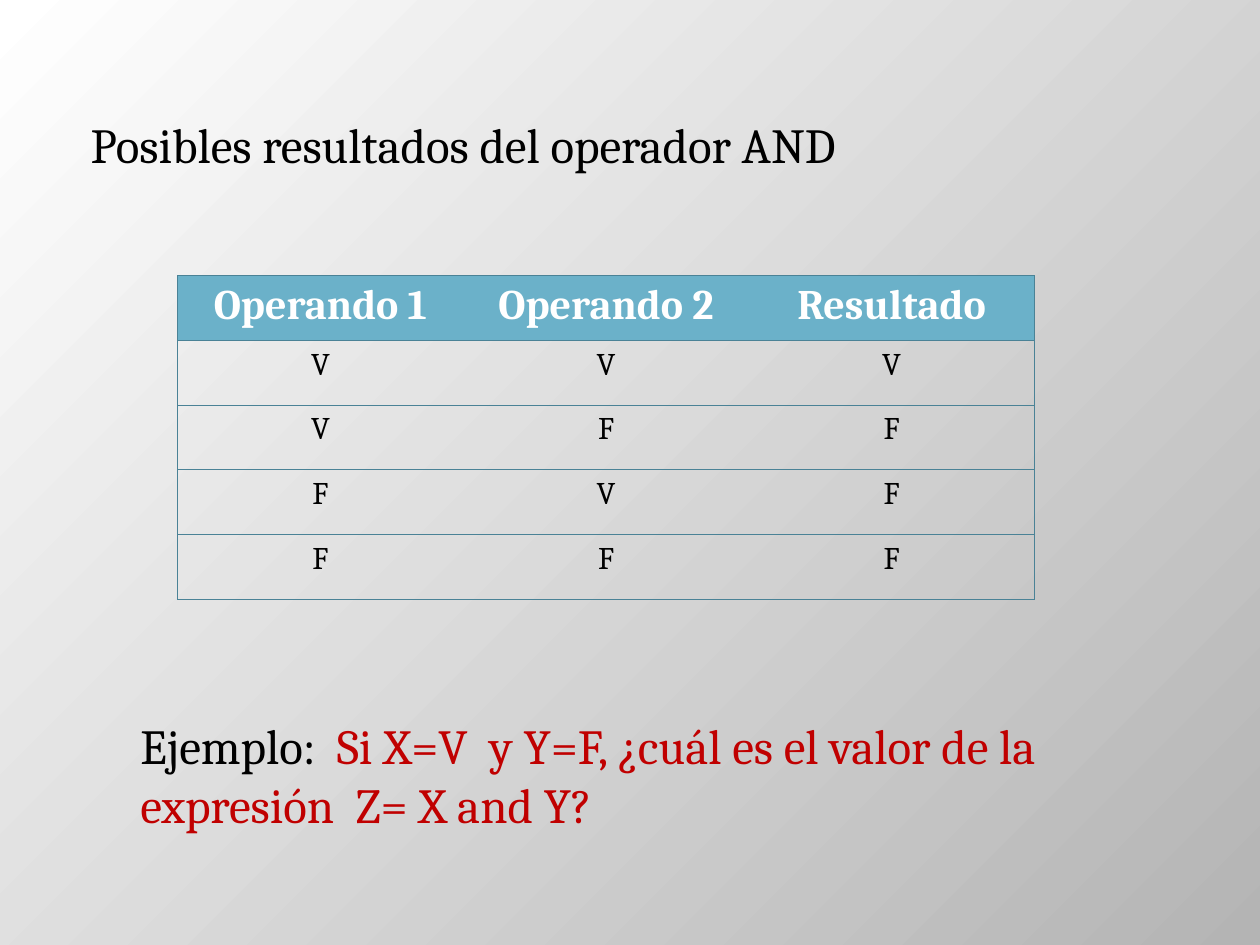
import pptx
import pptx.dml.color
import pptx.enum.text
import pptx.oxml
import pptx.oxml.ns
import pptx.util

Pt = pptx.util.Pt
NS = pptx.oxml.ns.nsdecls("a")


def color(code):
    return pptx.dml.color.RGBColor.from_string(code)


class Deck:
    font = "Cambria"
    ink = "000000"
    light = "FFFFFF"
    shade = "B4B4B4"
    head = "6BB1C9"
    edge = "4A8296"
    accent = "C00000"

    def __init__(self, wide, high):
        self.file = pptx.Presentation()
        self.file.slide_width, self.file.slide_height = Pt(wide), Pt(high)
        self.slide = self.file.slides.add_slide(self.file.slide_layouts[6])

    def backdrop(self):
        """Fill the background with a gradient spreading from the top left."""
        fill = self.slide.background.fill
        fill.gradient()
        for stop, code, place in zip(fill.gradient_stops, (self.light, self.shade), (0, 1)):
            stop.color.rgb = color(code)
            stop.position = place
        grad = self.slide.background._cSld.find(".//" + pptx.oxml.ns.qn("a:gradFill"))
        grad.remove(grad.find(pptx.oxml.ns.qn("a:lin")))
        grad.append(pptx.oxml.parse_xml(
            f'<a:path {NS} path="circle"><a:fillToRect r="100000" b="100000"/></a:path>'))

    def style(self, para, size, code=None, bold=False):
        para.font.name, para.font.size, para.font.bold = self.font, Pt(size), bold
        if code:
            para.font.color.rgb = color(code)

    def text(self, box, parts, size):
        """Add one paragraph made of (words, colour) parts."""
        frame = self.slide.shapes.add_textbox(*map(Pt, box)).text_frame
        frame.word_wrap = True
        para = frame.paragraphs[0]
        self.style(para, size)
        for words, code in parts:
            run = para.add_run()
            run.text = words
            run.font.name, run.font.size = self.font, Pt(size)
            run.font.color.rgb = color(code)
        return para

    def border(self, cell, side, shown):
        paint = f'<a:solidFill><a:srgbClr val="{self.edge}"/></a:solidFill>' if shown else "<a:noFill/>"
        cell._tc.get_or_add_tcPr().append(pptx.oxml.parse_xml(
            f'<a:ln{side} {NS} w="{Pt(0.75)}">{paint}</a:ln{side}>'))

    def table(self, box, rows):
        """Add a table with a filled head, row lines and an outer frame."""
        last = len(rows[0]) - 1
        grid = self.slide.shapes.add_table(len(rows), last + 1, *map(Pt, box)).table
        grid.horz_banding = False
        for r, row in enumerate(rows):
            for c, word in enumerate(row):
                cell = grid.cell(r, c)
                for side, shown in (("L", c == 0), ("R", c == last), ("T", True), ("B", True)):
                    self.border(cell, side, shown)
                if r == 0:
                    cell.fill.solid()
                    cell.fill.fore_color.rgb = color(self.head)
                else:
                    cell.fill.background()
                cell.text = word
                para = cell.text_frame.paragraphs[0]
                para.alignment = pptx.enum.text.PP_ALIGN.CENTER
                if r == 0:
                    self.style(para, 24, self.light, True)
                else:
                    self.style(para, 18, self.ink)


def main():
    deck = Deck(720, 540)
    deck.backdrop()

    # Heading
    title = deck.text((34, 62, 648, 62), [("Posibles resultados del operador AND", deck.ink)], 28)
    title.space_before = Pt(5.6)
    props = title._p.get_or_add_pPr()
    props.set("marL", str(Pt(43.2)))
    props.set("indent", str(Pt(-32.4)))

    # Truth table
    deck.table((101.5, 157.5, 489.6, 185),
               [("Operando 1", "Operando 2", "Resultado"), "VVV", "VFF", "FVF", "FFF"])

    # Example
    deck.text((73.2, 405.5, 590.4, 75),
              [("Ejemplo:  ", deck.ink),
               ("Si X=V  y Y=F, ¿cuál es el valor de la expresión  Z= X and Y?", deck.accent)], 28)

    deck.file.save("out.pptx")


if __name__ == "__main__":
    main()
